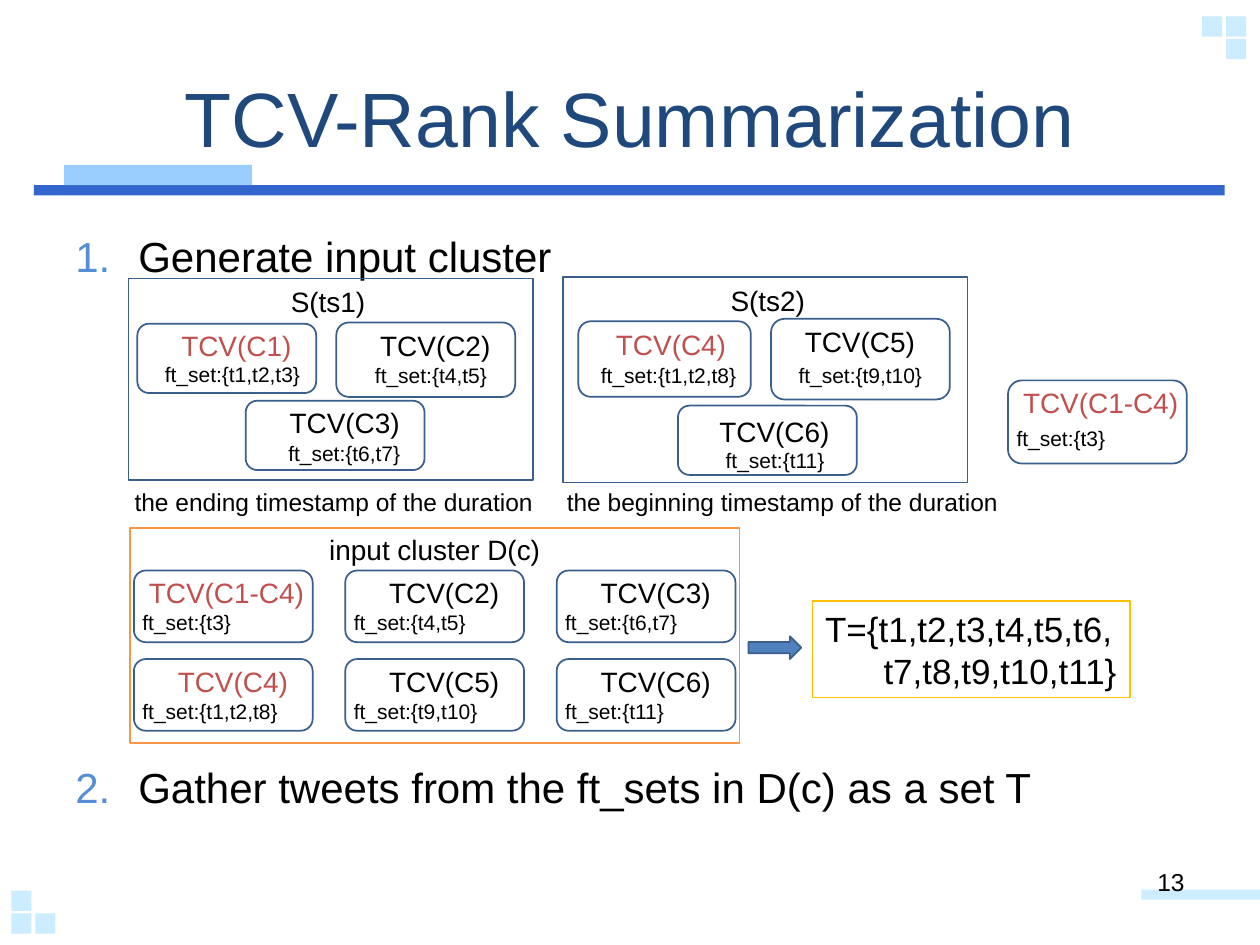
"""Builds the TCV-Rank Summarization slide; all lengths are in points."""
from lxml import etree
from pptx import Presentation
from pptx.dml.color import RGBColor
from pptx.enum import shapes, text
from pptx.oxml import ns
from pptx.util import Pt

BLACK, NAVY, RED, BLUE = "000000", "1F497D", "C0504D", "3A5F8C"
ORANGE, GOLD, ARROW, NUMBER = "F79646", "FFC000", "4F81BD", "558ED5"
RULE, TAB, PALE = "3366CC", "99CCFF", "CCECFF"

TITLE = "TCV-Rank Summarization"
STEPS = [("Generate input cluster", 0),
         ("Gather tweets from the ft_sets in D(c) as a set T", 274.5)]
BANDS = [((19.4, 105.8, 680.4, 5.8), RULE), ((36.7, 94.3, 107.3, 11.5), TAB),
         ((652.3, 508.3, 67.7, 5.8), PALE)]
SQUARES = [(700.6, 9.4), (686.9, 9.4), (700.6, 22.3),
           (6.5, 522), (20.2, 522), (6.5, 509)]
SQUARE = 11.5
FRAMES = [((73.4, 159.1, 231.1, 115.2), BLUE), ((321.8, 158.4, 231.1, 117.4), BLUE),
          ((74.2, 301.7, 348.5, 123.1), ORANGE)]
CAPTIONS = [("S(ts1)", 16, (159.1, 159.1, 57.6, 26.6)),
            ("S(ts2)", 16, (410.4, 158.4, 57.6, 26.6)),
            ("the ending timestamp of the duration", 14, (69.8, 275, 243.4, 24.5)),
            ("the beginning timestamp of the duration", 14, (316.8, 275, 262.1, 24.5))]
CARDS = [
    ("C1", "t1,t2,t3", (78.5, 185, 102.2, 39.6), (18, -0.7), (8.6, 18)),
    ("C2", "t4,t5", (192.2, 184.3, 102.2, 42.5), (18, 0), (15, 19.4)),
    ("C3", "t6,t7", (140.4, 229, 102.2, 39.6), (18, -0.7), (17.3, 19.4)),
    ("C4", "t1,t2,t8", (330.5, 183.6, 98.6, 43.2), (14.4, 0), (5.8, 20)),
    ("C5", "t9,t10", (440.6, 182.2, 102.2, 46.1), (12.2, 0), (8.6, 21.6)),
    ("C6", "t11", (387.4, 231.8, 102.2, 39.6), (16.6, 1.4), (20.2, 20.2)),
    ("C1-C4", "t3", (576, 217.4, 102.2, 47.5), (1.5, -0.7), (-2.2, 22.4)),
]
CLUSTER = [[("C1-C4", "t3"), ("C2", "t4,t5"), ("C3", "t6,t7")],
           [("C4", "t1,t2,t8"), ("C5", "t9,t10"), ("C6", "t11")]]
GRID_LEFT, GRID_TOP, COLUMN_PITCH, ROW_PITCH = 76.5, 326, 120.8, 50.6
MERGED = {"C1", "C4", "C1-C4"}
SET_WIDTHS = {"t3": 65.5, "t11": 71.3, "t4,t5": 79.2, "t6,t7": 79.2,
              "t9,t10": 85.7, "t1,t2,t3": 92.9, "t1,t2,t8": 92.9}
TWEETS = [("T={t1,t2,t3,t4,t5,t6,", 0), ("t7,t8,t9,t10,t11}", 33.4)]


def rgb(value):
    return RGBColor.from_string(value)


def style(paragraph, size, color):
    paragraph.font.name = "Arial"
    paragraph.font.size = Pt(size)
    paragraph.font.color.rgb = rgb(color)


def add_box(slide, box, fill=None, line=None, kind="RECTANGLE", width=1):
    shape = slide.shapes.add_shape(shapes.MSO_SHAPE[kind], *map(Pt, box))
    shape.shadow.inherit = False
    if fill:
        shape.fill.solid()
        shape.fill.fore_color.rgb = rgb(fill)
    else:
        shape.fill.background()
    if line:
        shape.line.color.rgb = rgb(line)
        shape.line.width = Pt(width)
    else:
        shape.line.fill.background()
    return shape


def add_label(slide, words, size, box, color=BLACK, align="LEFT", wrap=False):
    frame = slide.shapes.add_textbox(*map(Pt, box)).text_frame
    frame.word_wrap = wrap
    label = frame.paragraphs[0]
    label.text = words
    label.alignment = text.PP_ALIGN[align]
    style(label, size, color)


def add_card(slide, name, tweets, box, name_shift, set_shift):
    left, top = box[:2]
    add_box(slide, box, line=BLUE, kind="ROUNDED_RECTANGLE")
    name_width = 104.4 if "-" in name else 78.5
    add_label(slide, f"TCV({name})", 16,
              (left + name_shift[0], top + name_shift[1], name_width, 26.6),
              RED if name in MERGED else BLACK)
    add_label(slide, f"ft_set:{{{tweets}}}", 12,
              (left + set_shift[0], top + set_shift[1], SET_WIDTHS[tweets], 21.6))


def add_cluster(slide):
    for row, members in enumerate(CLUSTER):
        for column, (name, tweets) in enumerate(members):
            box = (GRID_LEFT + column * COLUMN_PITCH, GRID_TOP + row * ROW_PITCH,
                   102.2, 41)
            add_card(slide, name, tweets, box,
                     (1.5 if "-" in name else 18, -0.5), (-2.2, 19))


def add_steps(slide):
    frame = slide.shapes.add_textbox(Pt(36), Pt(128), Pt(648), Pt(356.4)).text_frame
    frame.word_wrap = True
    for index, (words, gap) in enumerate(STEPS):
        step = frame.add_paragraph() if index else frame.paragraphs[0]
        step.text = words
        step.space_before = Pt(gap)
        style(step, 24, BLACK)
        properties = step._p.get_or_add_pPr()
        properties.set("marL", str(Pt(36)))
        properties.set("indent", str(Pt(-36)))
        color = etree.SubElement(properties, ns.qn("a:buClr"))
        etree.SubElement(color, ns.qn("a:srgbClr"), val=NUMBER)
        etree.SubElement(properties, ns.qn("a:buFont"), typeface="+mj-lt")
        etree.SubElement(properties, ns.qn("a:buAutoNum"), type="arabicPeriod")
        properties.append(properties.find(ns.qn("a:defRPr")))


def add_tweets(slide):
    frame = add_box(slide, (464.4, 343.4, 181.4, 55.4), line=GOLD, width=0.75).text_frame
    frame.word_wrap = False
    for index, (words, indent) in enumerate(TWEETS):
        line = frame.add_paragraph() if index else frame.paragraphs[0]
        line.text = words
        line.alignment = text.PP_ALIGN.LEFT
        line._p.get_or_add_pPr().set("marL", str(Pt(indent)))
        style(line, 20, BLACK)


def add_title(slide):
    title = slide.shapes.title
    title.left, title.top, title.width, title.height = map(Pt, (36, 21.6, 648, 90))
    title.text_frame.text = TITLE
    title.text_frame.vertical_anchor = text.MSO_ANCHOR.MIDDLE
    heading = title.text_frame.paragraphs[0]
    heading.alignment = text.PP_ALIGN.CENTER
    style(heading, 44, NAVY)


def main():
    deck = Presentation()
    deck.slide_width, deck.slide_height = Pt(720), Pt(540)
    slide = deck.slides.add_slide(deck.slide_layouts[5])
    for box, fill in BANDS:
        add_box(slide, box, fill)
    for left, top in SQUARES:
        add_box(slide, (left, top, SQUARE, SQUARE), PALE)
    add_title(slide)
    add_steps(slide)
    add_label(slide, "13", 14, (516.2, 491.8, 167.8, 37.4), align="RIGHT", wrap=True)
    for box, line in FRAMES:
        add_box(slide, box, line=line)
    for words, size, box in CAPTIONS:
        add_label(slide, words, size, box)
    add_label(slide, "input cluster D(c)", 16, (74.2, 301, 348.5, 26.6),
              align="CENTER", wrap=True)
    for card in CARDS:
        add_card(slide, *card)
    add_cluster(slide)
    add_box(slide, (427.7, 363.6, 30.2, 13), ARROW, BLUE, "RIGHT_ARROW")
    add_tweets(slide)
    deck.save("out.pptx")


if __name__ == "__main__":
    main()
